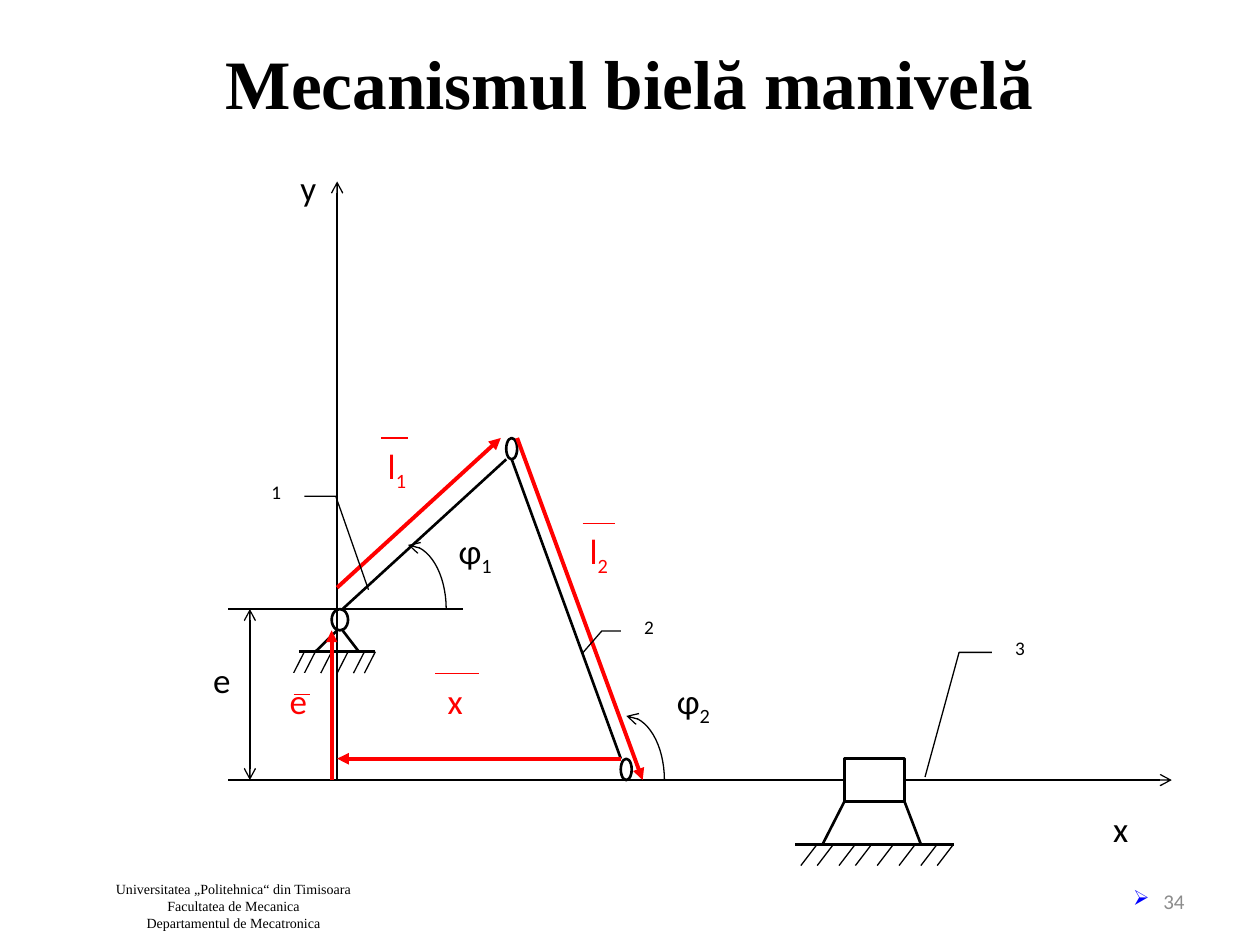
from dataclasses import dataclass
from math import cos, pi, sin
from typing import Any

from lxml.etree import SubElement
from pptx import Presentation
from pptx.dml.color import RGBColor
from pptx.enum.shapes import MSO_CONNECTOR, MSO_SHAPE
from pptx.enum.text import MSO_ANCHOR, PP_ALIGN
from pptx.oxml.ns import qn
from pptx.util import Inches, Pt


@dataclass(frozen=True)
class Theme:
    ink: str = "000000"
    vector: str = "FF0000"
    paper: str = "FFFFFF"
    muted: str = "8C8C8C"
    bullet: str = "0000FF"
    serif: str = "Times New Roman"
    sans: str = "Calibri"
    title: float = 39.6
    label: float = 20
    callout: float = 11
    number: float = 12
    footer: float = 8
    thin: float = 0.75
    bold: float = 1.5
    heavy: float = 2.25


THEME = Theme()
COLUMNS, ROWS = 173, 32
ORIGIN_COLUMN, ORIGIN_ROW = 20, 28


@dataclass(frozen=True)
class Box:
    left: float
    top: float
    width: float
    height: float

    def emu(self):
        return [Inches(v) for v in (self.left, self.top, self.width, self.height)]


@dataclass
class Diagram:
    slide: Any
    box: Box

    def point(self, column, up):
        return (Inches(self.box.left + (ORIGIN_COLUMN + column) * self.box.width / COLUMNS),
                Inches(self.box.top + (ORIGIN_ROW - up) * self.box.height / ROWS))

    def line(self, start, end, weight=THEME.thin, color=THEME.ink, head=None, tail=None):
        connector = self.slide.shapes.add_connector(
            MSO_CONNECTOR.STRAIGHT, *self.point(*start), *self.point(*end))
        style_line(connector, weight, color, head, tail)
        SubElement(connector._element.spPr, qn("a:effectLst"))
        return connector

    def shape(self, kind, column, up, columns, rows, fill=THEME.paper, weight=None):
        left, top = self.point(column, up)
        right, bottom = self.point(column + columns, up - rows)
        shape = self.slide.shapes.add_shape(kind, left, top, right - left, bottom - top)
        shape.shadow.inherit = False
        paint(shape, fill)
        if weight:
            style_line(shape, weight)
        else:
            shape.line.fill.background()
        return shape

    def hatch(self, columns, up, lean):
        for column in columns:
            self.line((column, up), (column - lean, up - 1))

    def label(self, text, column, up, columns, rows, color=THEME.ink, fill=THEME.paper):
        shape = self.shape(MSO_SHAPE.RECTANGLE, column, up, columns, rows, fill)
        paragraph = write(shape.text_frame, text[0], THEME.label, THEME.sans, color)
        if text[1:]:
            subscript = paragraph.add_run()
            subscript.text = text[1:]
            subscript._r.get_or_add_rPr().set("baseline", "-25000")

    def angle(self, column, up, columns=7, rows=3, steps=16):
        turns = [pi / 2 * step / steps for step in range(steps + 1)]
        points = [self.point(column + columns * sin(turn), up - rows * (1 - cos(turn)))
                  for turn in turns]
        builder = self.slide.shapes.build_freeform(*points[0])
        builder.add_line_segments(points[1:], close=False)
        arc = builder.convert_to_shape()
        arc.shadow.inherit = False
        arc.fill.background()
        style_line(arc, THEME.thin, head="arrow")

    def callout(self, text, column, up, adjustments, align=PP_ALIGN.LEFT):
        shape = self.shape(MSO_SHAPE.LINE_CALLOUT_2_NO_BORDER, column, up, 25, 5.4,
                           None, THEME.thin)
        for index, value in enumerate(adjustments):
            shape.adjustments[index] = value
        write(shape.text_frame, text, THEME.callout, THEME.sans, align=align)


def paint(shape, color):
    if color:
        shape.fill.solid()
        shape.fill.fore_color.rgb = RGBColor.from_string(color)
    else:
        shape.fill.background()


def style_line(shape, weight, color=THEME.ink, head=None, tail=None):
    shape.line.width = Pt(weight)
    shape.line.color.rgb = RGBColor.from_string(color)
    for tag, kind in (("a:headEnd", head), ("a:tailEnd", tail)):
        if kind:
            SubElement(shape.line._get_or_add_ln(), qn(tag)).set("type", kind)


def format_paragraph(paragraph, size, font, color, align):
    paragraph.alignment = align
    paragraph.font.size = Pt(size)
    paragraph.font.name = font
    paragraph.font.color.rgb = RGBColor.from_string(color)


def write(frame, text, size, font, color=THEME.ink, align=PP_ALIGN.LEFT):
    frame.word_wrap = True
    frame.vertical_anchor = MSO_ANCHOR.TOP
    paragraph = frame.paragraphs[0]
    paragraph.text = text
    paragraph.space_after = Pt(10)
    format_paragraph(paragraph, size, font, color, align)
    return paragraph


def add_title(slide, box):
    title = slide.shapes.title
    title.left, title.top, title.width, title.height = box.emu()
    frame = title.text_frame
    frame.text = "Mecanismul bielă manivelă"
    frame.vertical_anchor = MSO_ANCHOR.TOP
    frame.margin_top = Inches(0.02)
    paragraph = frame.paragraphs[0]
    format_paragraph(paragraph, THEME.title, THEME.serif, THEME.ink, PP_ALIGN.CENTER)
    paragraph.font.bold = True


def add_footer(slide, box):
    frame = slide.shapes.add_textbox(*box.emu()).text_frame
    frame.word_wrap = True
    frame.margin_left = frame.margin_right = frame.margin_top = frame.margin_bottom = 0
    frame.text = ("Universitatea „Politehnica“ din Timisoara\n"
                  "Facultatea de Mecanica\nDepartamentul de Mecatronica")
    for paragraph in frame.paragraphs:
        format_paragraph(paragraph, THEME.footer, THEME.serif, THEME.ink, PP_ALIGN.CENTER)


def add_number(slide, box):
    frame = slide.shapes.add_textbox(*box.emu()).text_frame
    frame.word_wrap = True
    frame.vertical_anchor = MSO_ANCHOR.MIDDLE
    paragraph = frame.paragraphs[0]
    paragraph.text = "34"
    properties = paragraph._p.get_or_add_pPr()
    properties.set("marL", str(Inches(0.24)))
    properties.set("indent", str(-Inches(0.24)))
    SubElement(SubElement(properties, qn("a:buClr")), qn("a:srgbClr")).set("val", THEME.bullet)
    SubElement(properties, qn("a:buFont")).set("typeface", "Wingdings")
    SubElement(properties, qn("a:buChar")).set("char", "Ø")
    format_paragraph(paragraph, THEME.number, THEME.sans, THEME.muted, PP_ALIGN.RIGHT)


def add_mechanism(slide, box):
    diagram = Diagram(slide, box)
    slider = diagram.shape(MSO_SHAPE.RECTANGLE, 93, 1, 11, 2, weight=THEME.bold)
    for start, end in (((0, 7), (-4, 6)), ((1, 7), (4, 6)), ((-7, 6), (7, 6)),
                       ((1, 8), (31, 15)), ((32, 15), (52, 1)), ((93, -1), (89, -3)),
                       ((104, -1), (107, -3)), ((84, -3), (113, -3))):
        diagram.line(start, end, THEME.bold)
    diagram.line((54, 0), (93, 0), THEME.bold).end_connect(slider, 1)
    diagram.line((104, 0), (127, 0), THEME.bold).begin_connect(slider, 3)
    for column, up, columns in ((-1, 8, 3), (31, 16, 2), (52, 1, 2)):
        diagram.shape(MSO_SHAPE.FLOWCHART_CONNECTOR, column, up, columns, 1, weight=THEME.bold)
    diagram.hatch((-6, -4, -1, 2, 5, 7), 6, 2)
    diagram.hatch((88, 91, 95, 98, 102, 106, 110, 113), -3, 3)

    diagram.line((-16, 8), (-16, 0), head="arrow", tail="arrow")
    diagram.line((0, 0), (0, 28), tail="arrow")
    diagram.line((127, 0), (153, 0), tail="arrow")
    for start, end in (((-20, 8), (0, 8)), ((0, 8), (23, 8)),
                       ((0, 0), (55, 0)), ((0, 0), (-20, 0))):
        diagram.line(start, end)
    for start, end in (((0, 9), (30, 16)), ((33, 16), (56, 0)),
                       ((52, 1), (0, 1)), ((-1, 0), (-1, 7))):
        diagram.line(start, end, THEME.heavy, THEME.vector, tail="triangle")

    for text, *place in (("e", -25, 6, 8, 3), ("y", -9, 29, 7, 4),
                         ("x", 140, -1, 13, 3), ("φ2", 60, 5, 13, 4)):
        diagram.label(text, *place)
    diagram.label("φ1", 20, 12, 13, 4, fill=None)
    for text, place, fill, bar_start, bar_end, bar_up in (
            ("l1", (7, 16, 11, 3), None, 8, 13, 16),
            ("l2", (44, 12, 11, 4), None, 45, 51, 12),
            ("x", (18, 5, 14, 3), THEME.paper, 18, 26, 5),
            ("e", (-11, 5, 8, 3), THEME.paper, -8, -5, 4)):
        diagram.label(text, *place, THEME.vector, fill)
        diagram.line((bar_start, bar_up), (bar_end, bar_up), color=THEME.vector)
    diagram.angle(13, 11)
    diagram.angle(53, 3)
    diagram.callout("1", -33, 14.3, (0.19, 1.08, 0.19, 1.31, 1, 1.55), PP_ALIGN.RIGHT)
    diagram.callout("2", 54, 8, (0.19, -0.08, 0.19, -0.22, 0.38, -0.36))
    diagram.callout("3", 122, 7, (0.19, -0.08, 0.19, -0.32, 1.27, -0.57))


def main():
    presentation = Presentation()
    width, height = 10, 7.5
    presentation.slide_width, presentation.slide_height = Inches(width), Inches(height)
    slide = presentation.slides.add_slide(presentation.slide_layouts[5])
    add_title(slide, Box(0.05 * width, 0.04 * height, 0.9 * width, 1.25))
    add_mechanism(slide, Box(1.81, 1.44, 7.49, 5.43))
    add_footer(slide, Box(0.69, 6.99, 2.33, 0.4))
    add_number(slide, Box(7.17, 6.95, 2.33, 0.4))
    presentation.save("out.pptx")


if __name__ == "__main__":
    main()
